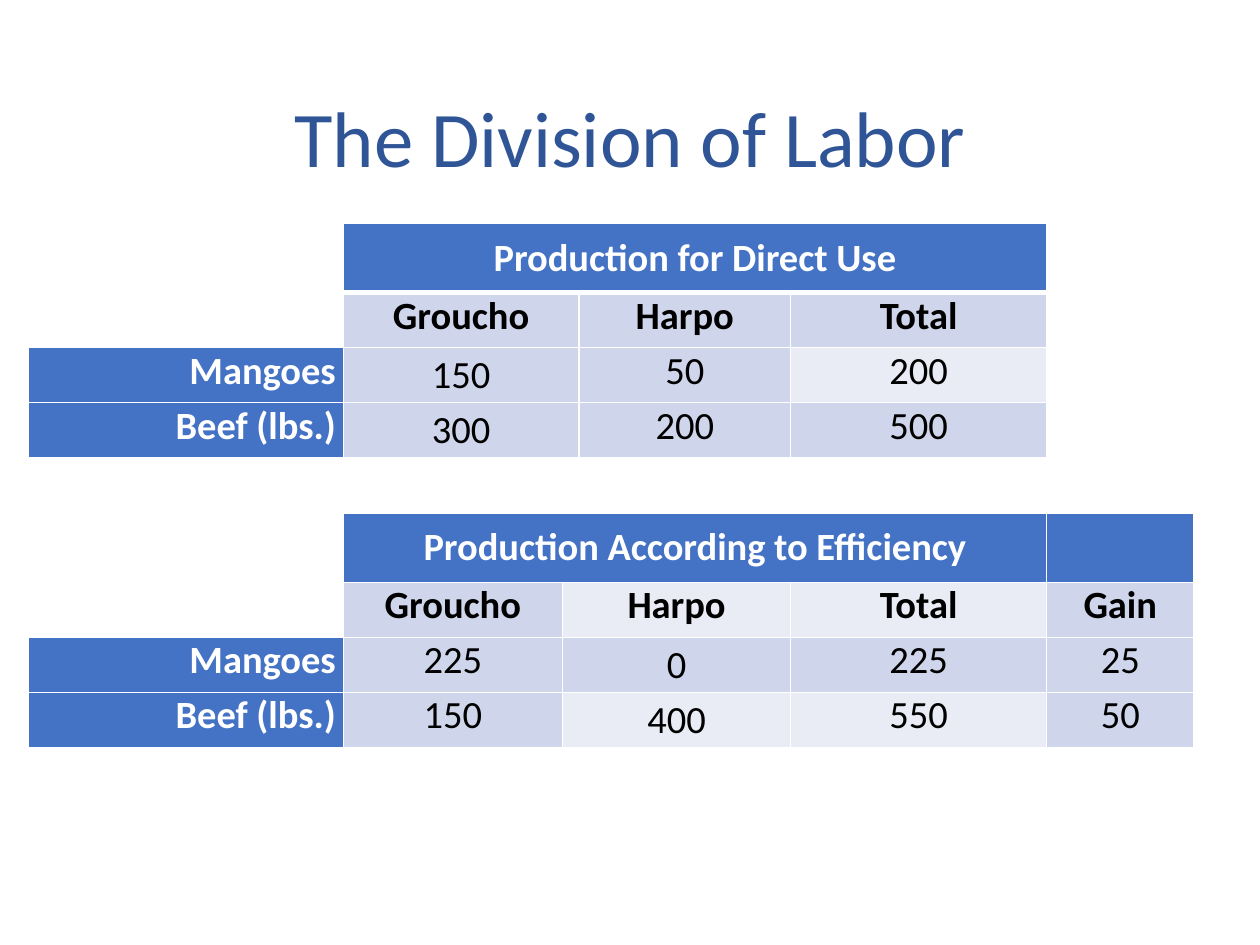
import pptx
import pptx.dml.color
import pptx.enum.text
import pptx.oxml
import pptx.oxml.ns
import pptx.util
from pptx.util import Cm

ALIGN = pptx.enum.text.PP_ALIGN
ANCHOR = pptx.enum.text.MSO_ANCHOR
FONT = "Calibri"
WHITE, BLACK, NAVY = "FFFFFF", "000000", "2F5597"
BLUE, MIST, PALE = "4472C4", "CFD5EA", "E9EBF5"

COLUMN_WIDTHS = [6.35, 4.42, 0.33, 4.27, 5.16, 2.97]
BANNER_HEIGHT, ROW_HEIGHT = 1.4, 1.11

# Kind of cell: text colour, bold, alignment
STYLES = {
    "banner": (WHITE, True, ALIGN.CENTER),
    "heading": (BLACK, True, ALIGN.CENTER),
    "label": (WHITE, True, ALIGN.RIGHT),
    "amount": (BLACK, False, ALIGN.CENTER),
}

# Each row lists its cells: text, kind, fill, columns spanned
BLANK = ("", None, WHITE, 1)
PRODUCTION = [
    [BLANK, ("Production for Direct Use", "banner", BLUE, 4), BLANK],
    [BLANK, ("Groucho", "heading", MIST, 2), ("Harpo", "heading", MIST, 1),
     ("Total", "heading", MIST, 1), BLANK],
    [("Mangoes", "label", BLUE, 1), ("150", "amount", MIST, 2),
     ("50", "amount", MIST, 1), ("200", "amount", PALE, 1), BLANK],
    [("Beef (lbs.)", "label", BLUE, 1), ("300", "amount", MIST, 2),
     ("200", "amount", MIST, 1), ("500", "amount", MIST, 1), BLANK],
    [BLANK, ("", None, WHITE, 2), BLANK, BLANK, BLANK],
    [BLANK, ("Production According to Efficiency", "banner", BLUE, 4),
     ("", None, BLUE, 1)],
    [BLANK, ("Groucho", "heading", MIST, 1), ("Harpo", "heading", PALE, 2),
     ("Total", "heading", PALE, 1), ("Gain", "heading", MIST, 1)],
    [("Mangoes", "label", BLUE, 1), ("225", "amount", MIST, 1),
     ("0", "amount", MIST, 2), ("225", "amount", MIST, 1), ("25", "amount", MIST, 1)],
    [("Beef (lbs.)", "label", BLUE, 1), ("150", "amount", MIST, 1),
     ("400", "amount", PALE, 2), ("550", "amount", PALE, 1), ("50", "amount", MIST, 1)],
]


def color(hex_code):
    return pptx.dml.color.RGBColor.from_string(hex_code)


def format_text(paragraph, size, hex_code, bold, align):
    paragraph.alignment = align
    for run in paragraph.runs:
        run.font.name = FONT
        run.font.size = pptx.util.Pt(size)
        run.font.bold = bold
        run.font.color.rgb = color(hex_code)


def add_title(slide, text):
    title = slide.shapes.add_textbox(Cm(1.75), Cm(1.02), Cm(21.9), Cm(3.68))
    frame = title.text_frame
    frame.word_wrap = True
    frame.vertical_anchor = ANCHOR.MIDDLE
    frame.text = text
    frame.paragraphs[0].line_spacing = 0.9
    format_text(frame.paragraphs[0], 45, NAVY, False, ALIGN.CENTER)


def set_borders(cell, bottom_width):
    """Draw white borders; call before filling, as lines precede the fill in XML."""
    properties = cell._tc.get_or_add_tcPr()
    for side, width in (("L", 1), ("R", 1), ("T", 1), ("B", bottom_width)):
        properties.append(pptx.oxml.parse_xml(
            f'<a:ln{side} {pptx.oxml.ns.nsdecls("a")} w="{pptx.util.Pt(width)}">'
            f'<a:solidFill><a:srgbClr val="{WHITE}"/></a:solidFill></a:ln{side}>'))


def fill_cell(cell, text, kind, fill, span):
    cell.fill.solid()
    cell.fill.fore_color.rgb = color(fill)
    if not kind:
        return
    cell.margin_left = cell.margin_right = Cm(0.15)
    cell.margin_top = cell.margin_bottom = 0
    if kind == "banner" or (kind == "amount" and span > 1):
        cell.vertical_anchor = ANCHOR.MIDDLE
    cell.text_frame.text = text
    format_text(cell.text_frame.paragraphs[0], 22, *STYLES[kind])


def add_production_table(slide):
    heights = [BANNER_HEIGHT if any(kind == "banner" for _, kind, _, _ in row)
               else ROW_HEIGHT for row in PRODUCTION]
    table = slide.shapes.add_table(
        len(PRODUCTION), len(COLUMN_WIDTHS), Cm(0.57), Cm(4.5),
        Cm(sum(COLUMN_WIDTHS)), Cm(sum(heights))).table
    table.first_row = table.horz_banding = False
    for column, width in zip(table.columns, COLUMN_WIDTHS):
        column.width = Cm(width)
    for row_index, (cells, height) in enumerate(zip(PRODUCTION, heights)):
        table.rows[row_index].height = Cm(height)
        for column_index in range(len(COLUMN_WIDTHS)):
            set_borders(table.cell(row_index, column_index), 1 if row_index else 3)
        first = 0
        for text, kind, fill, span in cells:
            cell = table.cell(row_index, first)
            if span > 1:
                cell.merge(table.cell(row_index, first + span - 1))
            fill_cell(cell, text, kind, fill, span)
            first += span


def main():
    presentation = pptx.Presentation()
    presentation.slide_width, presentation.slide_height = Cm(25.4), Cm(19.05)
    slide = presentation.slides.add_slide(presentation.slide_layouts[6])
    add_title(slide, "The Division of Labor")
    add_production_table(slide)
    presentation.save("out.pptx")


if __name__ == "__main__":
    main()
